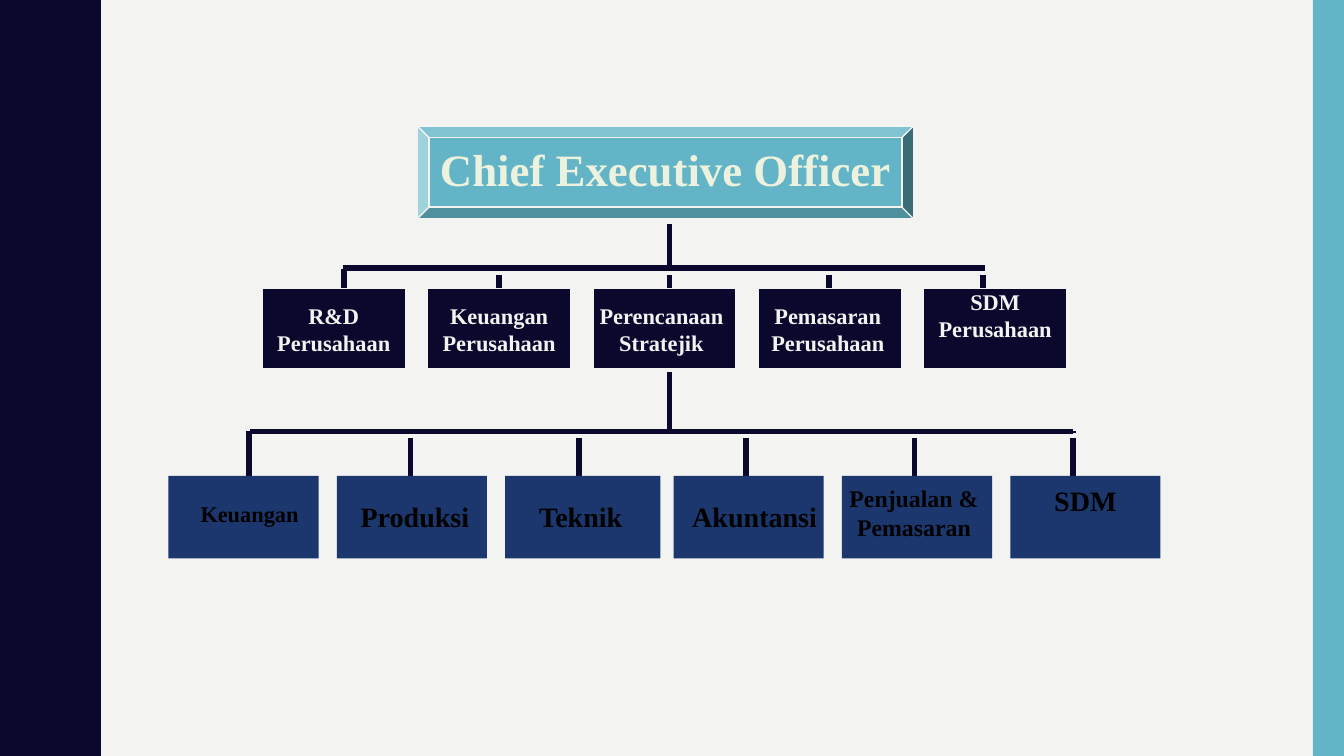
import pptx
import pptx.util
import pptx.dml.color
import pptx.enum.shapes
import pptx.enum.text
from dataclasses import dataclass
from lxml import etree

CHIEF = "Chief Executive Officer"
# label, text width, text shift from box centre, text top, size role, stub x
STAFF = [
    ("R&D Perusahaan", 1.34, 0, 2.95, "small", 3.41),
    ("Keuangan Perusahaan", 1.73, 0, 2.95, "small", 4.95),
    ("Perencanaan Stratejik", 1.82, -0.03, 2.95, "small", None),
    ("Pemasaran Perusahaan", 1.78, -0.02, 2.95, "small", 8.22),
    ("SDM Perusahaan", 1.54, 0, 2.81, "small", 9.75),
]
UNITS = [
    ("Keuangan", 1.18, 0.06, 4.91, "small", 2.47),
    ("Produksi", 1.59, 0.03, 4.91, "large", 4.07),
    ("Teknik", 1.68, -0.02, 4.91, "large", 5.74),
    ("Akuntansi", 1.63, 0.06, 4.91, "large", 7.4),
    ("Penjualan & Pemasaran", 1.49, -0.03, 4.75, "medium", 9.07),
    ("SDM", 1.42, 0, 4.75, "large", 10.64),
]
UNIT_WIDTHS = {"Teknik": 1.54}
HALF_WAVE = [(0.78, 0), (0.78, 0.07), (0.79, 0.14), (0.8, 0.2), (0.81, 0.25),
             (0.83, 0.29), (0.85, 0.33), (0.87, 0.38), (0.89, 0.42), (0.91, 0.46),
             (0.93, 0.5), (0.95, 0.55), (0.96, 0.61), (0.97, 0.68), (0.97, 0.75)]


@dataclass(frozen=True)
class Theme:
    paper: str = "F3F3F2"
    navy: str = "0B082E"
    teal: str = "62B4C6"
    blue: str = "1B376E"
    cream: str = "ECF2DD"
    black: str = "000000"
    font: str = "Times New Roman"
    title: int = 32
    large: int = 20
    medium: int = 17
    small: int = 16
    rule: int = 4


T = Theme()
W, H = 13.33, 7.5
WAVE = H / 5
TRUNK_X = 6.64
STAFF_LEFT, STAFF_PITCH, STAFF_W = 2.6, 1.64, 1.42
UNIT_LEFT, UNIT_PITCH, UNIT_W = 1.67, 1.67, 1.49
A = "http://schemas.openxmlformats.org/drawingml/2006/main"
MSO = pptx.enum.shapes.MSO_SHAPE
Inches = pptx.util.Inches

prs = pptx.Presentation()
prs.slide_width, prs.slide_height = Inches(W), Inches(H)
s = prs.slides.add_slide(prs.slide_layouts[5])


def rgb(color):
    return pptx.dml.color.RGBColor.from_string(color)


def add_shadow(props, distance):
    effects = props.find(f"{{{A}}}effectLst")
    if effects is None:
        effects = etree.SubElement(props, f"{{{A}}}effectLst")
    if distance:
        shadow = etree.SubElement(effects, f"{{{A}}}outerShdw", dist=str(int(pptx.util.Pt(distance))),
                                  dir="2700000", algn="ctr", rotWithShape="0")
        etree.SubElement(shadow, f"{{{A}}}srgbClr", val=T.paper)


def paint(sp, fill, line=None, shadow=0):
    sp.shadow.inherit = False
    sp.fill.solid()
    sp.fill.fore_color.rgb = rgb(fill)
    if line:
        sp.line.color.rgb = rgb(line)
        sp.line.width = pptx.util.Pt(1)
    else:
        sp.line.fill.background()
    add_shadow(sp.element.spPr, shadow)


def box(kind, x, y, w, h, fill, **look):
    sp = s.shapes.add_shape(kind, Inches(x), Inches(y), Inches(w), Inches(h))
    paint(sp, fill, **look)
    return sp


def rule(x1, y1, x2, y2):
    c = s.shapes.add_connector(pptx.enum.shapes.MSO_CONNECTOR.STRAIGHT,
                               Inches(x1), Inches(y1), Inches(x2), Inches(y2))
    c.line.color.rgb = rgb(T.navy)
    c.line.width = pptx.util.Pt(T.rule)
    add_shadow(c.element.spPr, 4.2)


def write(text, *, x, y, w, h, size, color, holder=None):
    sp = holder or s.shapes.add_textbox(0, 0, 0, 0)
    sp.left, sp.top, sp.width, sp.height = map(Inches, (x, y, w, h))
    tf = sp.text_frame
    tf.word_wrap = True
    tf.auto_size = pptx.enum.text.MSO_AUTO_SIZE.NONE
    tf.vertical_anchor = pptx.enum.text.MSO_ANCHOR.TOP
    p = tf.paragraphs[0]
    p.alignment = pptx.enum.text.PP_ALIGN.CENTER
    r = p.add_run()
    r.text = text
    r.font.name, r.font.size, r.font.bold = T.font, pptx.util.Pt(size), True
    r.font.color.rgb = rgb(color)


def draw_level(items, left, pitch, width, top, height, fill, ink, widths, **look):
    centres = []
    for i, item in enumerate(items):
        w = widths.get(item[0], width)
        x = left + i * pitch
        box(MSO.RECTANGLE, x, top, w, height, fill, **look)
        centres.append(x + w / 2)
    for centre, (label, w, shift, y, role, stub) in zip(centres, items):
        write(label, x=centre + shift - w / 2, y=y, w=w, h=0.63,
              size=getattr(T, role), color=ink)


def draw_stubs(items, top, bottom):
    for *rest, x in items:
        if x is not None:
            rule(x, top, x, bottom)


s.background.fill.solid()
s.background.fill.fore_color.rgb = rgb(T.paper)

period = HALF_WAVE + [(x, WAVE - y) for x, y in HALF_WAVE[-2:0:-1]]
edge = [(x, y + k * WAVE) for k in range(5) for x, y in period] + [(0.78, H), (0, H)]
wave = s.shapes.build_freeform(0, 0, scale=Inches(1))
wave.add_line_segments(edge, close=True)
paint(wave.convert_to_shape(), T.navy)
box(MSO.RECTANGLE, W - 0.31, 0, 0.31, H, T.teal)

rule(TRUNK_X, 2.07, TRUNK_X, 4.26)
draw_stubs(UNITS, 4.28, 4.95)
rule(2.48, 4.28, 10.64, 4.28)
draw_level(UNITS, UNIT_LEFT, UNIT_PITCH, UNIT_W, 4.72, 0.82, T.blue, T.black,
           UNIT_WIDTHS, shadow=4.2)

bevel = box(MSO.BEVEL, 4.14, 1.25, 4.92, 0.92, T.teal, line=T.paper, shadow=4.2)
bevel.adjustments[0] = 0.125
title = s.shapes.title
s.shapes.element.append(title.element)
write(CHIEF, x=4.14, y=1.36, w=4.92, h=0.64, size=T.title, color=T.cream, holder=title)

draw_stubs(STAFF, 2.67, 3.34)
rule(3.4, 2.66, 9.77, 2.66)
draw_level(STAFF, STAFF_LEFT, STAFF_PITCH, STAFF_W, 2.86, 0.8, T.navy, T.paper,
           {}, line=T.paper, shadow=2.8)

prs.save("out.pptx")
